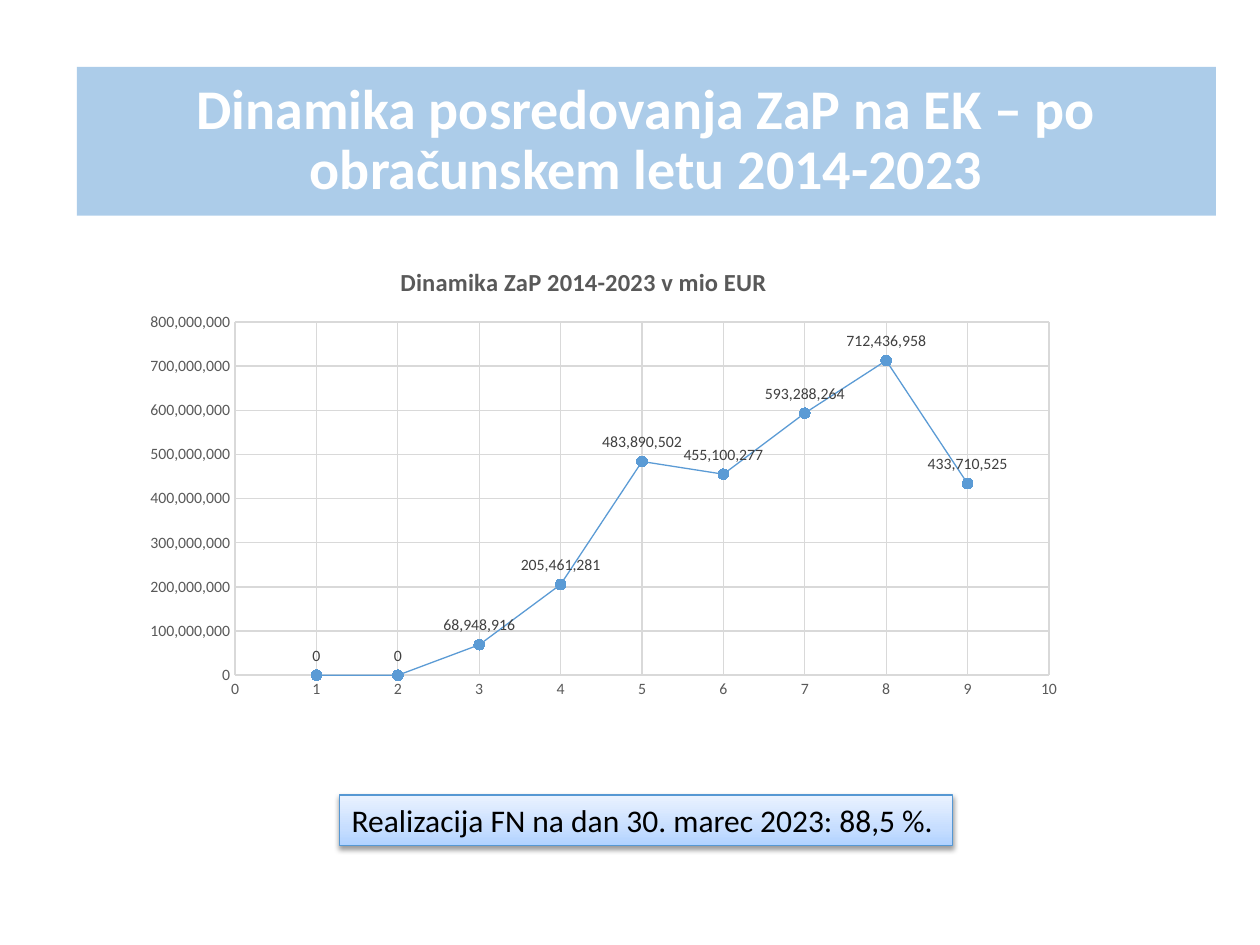
from dataclasses import dataclass
from typing import Optional

from lxml import etree
from pptx import Presentation
from pptx.chart.data import XyChartData
from pptx.dml.color import RGBColor
from pptx.enum.chart import XL_CHART_TYPE, XL_MARKER_STYLE, XL_TICK_MARK
from pptx.enum.shapes import MSO_SHAPE
from pptx.enum.text import MSO_ANCHOR, MSO_AUTO_SIZE, PP_ALIGN
from pptx.oxml import parse_xml
from pptx.oxml.ns import nsdecls, qn
from pptx.util import Cm, Pt

SCATTER = XL_CHART_TYPE.XY_SCATTER_LINES
CIRCLE = XL_MARKER_STYLE.CIRCLE
NO_TICK = XL_TICK_MARK.NONE
RECT = MSO_SHAPE.RECTANGLE
MIDDLE = MSO_ANCHOR.MIDDLE
CENTER, LEFT = PP_ALIGN.CENTER, PP_ALIGN.LEFT
FONT = "Calibri"
BLUE, GRID, GREY = "5B9BD5", "D9D9D9", "595959"
NUMBER = "#,##0"
AMOUNTS = [0, 0, 68948916, 205461281, 483890502, 455100277,
           593288264, 712436958, 433710525]


@dataclass
class Panel:
    text: str
    left: float
    top: float
    width: float
    height: float
    font: dict
    frame: dict
    para: dict


def rgb(value: str) -> RGBColor:
    return RGBColor.from_string(value)


def apply(obj, values: dict) -> None:
    for name, value in values.items():
        setattr(obj, name, value)


def style_font(font, size: float, color: str, bold: bool = False) -> None:
    apply(font, {"name": FONT, "size": Pt(size), "bold": bold})
    font.color.rgb = rgb(color)


def style_line(line, color: Optional[str], width: float = 0.75) -> None:
    if color is None:
        line.fill.background()
        return
    line.color.rgb = rgb(color)
    line.width = Pt(width)


def draw_panel(slide, panel: Panel):
    sp = slide.shapes.add_shape(RECT, Cm(panel.left), Cm(panel.top),
                                Cm(panel.width), Cm(panel.height))
    sp.shadow.inherit = False
    tf = sp.text_frame
    apply(tf, panel.frame)
    p = tf.paragraphs[0]
    apply(p, panel.para)
    r = p.add_run()
    r.text = panel.text
    style_font(r.font, **panel.font)
    return sp


def set_layout(parent, index: int, **fractions: float) -> None:
    """Place a chart part by fractions of the chart's size."""
    for old in parent.findall(qn("c:layout")):
        parent.remove(old)
    layout = etree.Element(qn("c:layout"))
    manual = etree.SubElement(layout, qn("c:manualLayout"))
    if "w" in fractions:
        etree.SubElement(manual, qn("c:layoutTarget")).set("val", "inner")
    for name in ("xMode", "yMode"):
        etree.SubElement(manual, qn(f"c:{name}")).set("val", "edge")
    for name, value in fractions.items():
        etree.SubElement(manual, qn(f"c:{name}")).set("val", str(value))
    parent.insert(index, layout)


def style_axis(axis, top: float, step: float, line: Optional[str]) -> None:
    apply(axis, {"minimum_scale": 0, "maximum_scale": top, "major_unit": step,
                 "major_tick_mark": NO_TICK, "minor_tick_mark": NO_TICK,
                 "has_major_gridlines": True})
    apply(axis.tick_labels, {"number_format": NUMBER,
                             "number_format_is_linked": False})
    style_font(axis.tick_labels.font, 9, GREY)
    style_line(axis.format.line, line, 1)
    style_line(axis.major_gridlines.format.line, GRID)


def add_value_labels(series) -> None:
    shown = "".join(f'<c:{tag} val="{int(tag == "showVal")}"/>' for tag in (
        "showLegendKey", "showVal", "showCatName", "showSerName",
        "showPercent", "showBubbleSize"))
    labels = parse_xml(
        f'<c:dLbls {nsdecls("c", "a")}>'
        f'<c:numFmt formatCode="{NUMBER}" sourceLinked="0"/>'
        '<c:spPr><a:noFill/><a:ln><a:noFill/></a:ln></c:spPr>'
        '<c:txPr><a:bodyPr/><a:p><a:pPr><a:defRPr sz="900" b="0">'
        '<a:solidFill><a:srgbClr val="404040"/></a:solidFill>'
        f'<a:latin typeface="{FONT}"/></a:defRPr></a:pPr></a:p></c:txPr>'
        f'<c:dLblPos val="t"/>{shown}</c:dLbls>')
    series._element.find(qn("c:xVal")).addprevious(labels)


def draw_chart(slide) -> None:
    data = XyChartData(number_format=NUMBER)
    points = data.add_series("Series 1")
    for year, amount in enumerate(AMOUNTS, 1):
        points.add_data_point(year, amount)
    chart = slide.shapes.add_chart(SCATTER, Cm(2.64), Cm(4.78), Cm(19.08),
                                   Cm(9.5), data).chart
    chart.has_legend = False
    style_font(chart.font, 10, "000000")

    # Title and plot placement
    tf = chart.chart_title.text_frame
    tf.text = "Dinamika ZaP 2014-2023 v mio EUR"
    style_font(tf.paragraphs[0].runs[0].font, 14, GREY, True)
    set_layout(chart.chart_title._element, 1, x=0.28, y=0.05)
    plot_area = chart._chartSpace.chart.plotArea
    set_layout(plot_area, 0, x=0.11, y=0.18, w=0.86, h=0.75)

    # Axes and series
    style_axis(chart.category_axis, 10, 1, GRID)
    style_axis(chart.value_axis, 800_000_000, 100_000_000, None)
    plot = chart.plots[0]
    plot.vary_by_categories = False
    series = plot.series[0]
    style_line(series.format.line, BLUE)
    apply(series.marker, {"style": CIRCLE, "size": 6})
    series.marker.format.fill.solid()
    series.marker.format.fill.fore_color.rgb = rgb("559BDB")
    style_line(series.marker.format.line, BLUE)
    add_value_labels(series)


def main() -> None:
    prs = Presentation()
    prs.slide_width, prs.slide_height = Cm(25.4), Cm(19.05)
    s = prs.slides.add_slide(prs.slide_layouts[6])

    # Heading band, half transparent
    band = draw_panel(s, Panel(
        "Dinamika posredovanja ZaP na EK – po obračunskem letu 2014-2023",
        1.55, 1.35, 22.96, 3,
        {"size": 32, "color": "FFFFFF", "bold": True},
        {"word_wrap": True, "vertical_anchor": MIDDLE},
        {"alignment": CENTER, "line_spacing": 0.9}))
    band.fill.solid()
    band.fill.fore_color.rgb = rgb(BLUE)
    color = band._element.spPr.find(f".//{qn('a:srgbClr')}")
    etree.SubElement(color, qn("a:alpha")).set("val", "50000")
    style_line(band.line, None)

    draw_chart(s)

    # Result note with gradient and soft shadow
    note = draw_panel(s, Panel(
        "Realizacija FN na dan 30. marec 2023: 88,5 %.",
        6.84, 16.03, 12.37, 1.02,
        {"size": 18, "color": "000000"},
        {"word_wrap": False, "auto_size": MSO_AUTO_SIZE.SHAPE_TO_FIT_TEXT,
         "vertical_anchor": MSO_ANCHOR.TOP},
        {"alignment": LEFT}))
    style_line(note.line, "5698D3")
    stops = "".join(
        f'<a:gs pos="{pos * 1000}"><a:srgbClr val="{value}"/></a:gs>'
        for pos, value in ((0, "B0D2FF"), (35, "C7DEFF"), (100, "EAF2FF")))
    sp_pr = note._element.spPr
    sp_pr.find(qn("a:ln")).addprevious(parse_xml(
        f'<a:gradFill {nsdecls("a")} rotWithShape="1"><a:gsLst>{stops}</a:gsLst>'
        '<a:lin ang="16200000" scaled="0"/></a:gradFill>'))
    sp_pr.find(qn("a:effectLst")).append(parse_xml(
        f'<a:outerShdw {nsdecls("a")} blurRad="{Pt(3.1)}" dist="{Pt(1.6)}" '
        'dir="5400000" rotWithShape="0"><a:srgbClr val="000000">'
        '<a:alpha val="38000"/></a:srgbClr></a:outerShdw>'))

    prs.save("out.pptx")


if __name__ == "__main__":
    main()
